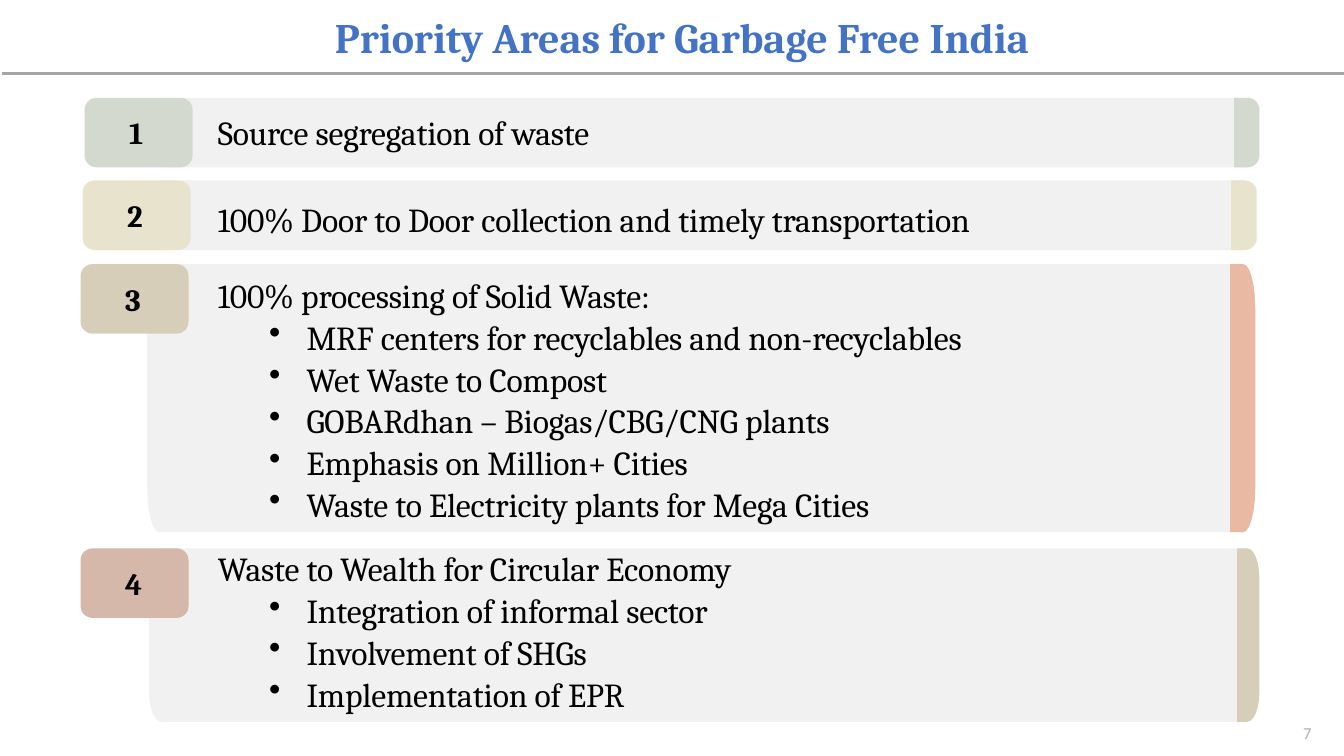
import dataclasses
import math

import pptx
import pptx.dml.color
import pptx.enum.shapes
import pptx.enum.text
import pptx.oxml
import pptx.oxml.ns
import pptx.util

Inches = pptx.util.Inches
Pt = pptx.util.Pt
Align = pptx.enum.text.PP_ALIGN
Anchor = pptx.enum.text.MSO_ANCHOR


@dataclasses.dataclass(frozen=True)
class Theme:
    heading_font: str = "Cambria"
    number_font: str = "Calibri"
    title: str = "4472C4"
    text: str = "000000"
    page: str = "B2B2B2"
    rule: str = "A5A5A5"
    panel: str = "F1F1F1"
    sage: str = "D3D9CF"
    cream: str = "E7E3CC"
    sand: str = "D7CEB9"
    coral: str = "EAB9A4"
    rose: str = "D6B8AB"
    title_size: float = 30
    body_size: float = 24
    badge_size: float = 22
    page_size: float = 12


@dataclasses.dataclass(frozen=True)
class Area:
    top: float
    height: float
    badge_left: float
    panel_left: float
    cap_left: float
    cap_width: float
    text_top: float
    badge_color: str
    cap_color: str
    heading: str
    points: tuple = ()


THEME = Theme()
PANEL_WIDTH = 10.99
BADGE_WIDTH = 1.07
BADGE_HEIGHT = 0.69
CORNER = 0.12
AREAS = [
    Area(0.97, 0.69, 0.84, 1.5, 12.24, 0.25, 1.1, THEME.sage, THEME.sage,
         "Source segregation of waste"),
    Area(1.79, 0.69, 0.82, 1.48, 12.21, 0.25, 1.96, THEME.cream, THEME.cream,
         "100% Door to Door collection and timely transportation"),
    Area(2.62, 2.66, 0.8, 1.46, 12.2, 0.25, 2.72, THEME.sand, THEME.coral,
         "100% processing of Solid Waste:",
         ("MRF centers for recyclables and non-recyclables",
          "Wet Waste to Compost",
          "GOBARdhan – Biogas/CBG/CNG plants",
          "Emphasis on Million+ Cities",
          "Waste to Electricity plants for Mega Cities")),
    Area(5.44, 1.72, 0.8, 1.48, 12.27, 0.22, 5.43, THEME.rose, THEME.sand,
         "Waste to Wealth for Circular Economy",
         ("Integration of informal sector",
          "Involvement of SHGs",
          "Implementation of EPR")),
]


def rgb(color):
    return pptx.dml.color.RGBColor.from_string(color)


class SlideBuilder:
    def __init__(self, slide, theme):
        self.slide = slide
        self.theme = theme

    def set_font(self, paragraph, size, color, bold=False, name=None):
        font = paragraph.font
        font.name = name or self.theme.heading_font
        font.size = Pt(size)
        font.bold = bold
        font.color.rgb = rgb(color)

    def prepare_frame(self, frame, anchor=Anchor.TOP):
        frame.word_wrap = True
        frame.vertical_anchor = anchor
        frame.margin_left = frame.margin_right = frame.margin_bottom = 0
        frame.margin_top = Inches(0.01)

    def add_title(self, wording, left, top, width, height):
        title = self.slide.shapes.title
        title.left, title.top = Inches(left), Inches(top)
        title.width, title.height = Inches(width), Inches(height)
        self.prepare_frame(title.text_frame, Anchor.MIDDLE)
        heading = title.text_frame.paragraphs[0]
        heading.text = wording
        heading.alignment = Align.CENTER
        heading.line_spacing = 0.9
        self.set_font(heading, self.theme.title_size, self.theme.title, bold=True)

    def add_rule(self, left, right, y):
        rule = self.slide.shapes.add_connector(
            pptx.enum.shapes.MSO_CONNECTOR.STRAIGHT,
            Inches(left), Inches(y), Inches(right), Inches(y))
        rule.line.color.rgb = rgb(self.theme.rule)
        rule.line.width = Pt(2.25)
        properties = rule._element.spPr
        properties.append(pptx.oxml.parse_xml(
            f'<a:effectLst {pptx.oxml.ns.nsdecls("a")}/>'))

    def add_block(self, left, top, width, height, color, square_left=False):
        """Draw a block whose corners stretch with its height."""
        rise = height / 6
        corners = [(left + width - CORNER, top + rise, -90),
                   (left + width - CORNER, top + height - rise, 0)]
        if not square_left:
            corners += [(left + CORNER, top + height - rise, 90),
                        (left + CORNER, top + rise, 180)]
        outline = [(x + CORNER * math.cos(math.radians(start + turn)),
                    y + rise * math.sin(math.radians(start + turn)))
                   for x, y, start in corners for turn in range(0, 91, 15)]
        if square_left:
            outline += [(left, top + height), (left, top)]
        points = [(Inches(x), Inches(y)) for x, y in outline]
        builder = self.slide.shapes.build_freeform(*points[0])
        builder.add_line_segments(points[1:], close=True)
        block = builder.convert_to_shape()
        block.shadow.inherit = False
        block.fill.solid()
        block.fill.fore_color.rgb = rgb(color)
        block.line.fill.background()

    def add_text_frame(self, left, top, width, height, anchor=Anchor.TOP):
        frame = self.slide.shapes.add_textbox(
            Inches(left), Inches(top), Inches(width), Inches(height)).text_frame
        self.prepare_frame(frame, anchor)
        return frame

    def write_line(self, paragraph, wording, size, bold=False, bullet=False):
        run = paragraph.add_run()
        run.text = wording
        run._r.get_or_add_rPr().set("spc", "-10")
        paragraph.space_before = Pt(1)
        properties = paragraph._p.get_or_add_pPr()
        properties.set("marL", str(Inches(0.89 if bullet else 0.01)))
        properties.set("indent", str(Inches(-0.37 if bullet else 0)))
        if bullet:
            paragraph.level = 1
            namespace = pptx.oxml.ns.nsdecls("a")
            properties.append(pptx.oxml.parse_xml(
                f'<a:buClr {namespace}><a:srgbClr val="{self.theme.text}"/></a:buClr>'))
            properties.append(pptx.oxml.parse_xml(f'<a:buChar {namespace} char="•"/>'))
        self.set_font(paragraph, size, self.theme.text, bold)

    def add_area(self, number, area):
        theme = self.theme
        self.add_block(area.panel_left, area.top, PANEL_WIDTH, area.height, theme.panel)
        self.add_block(area.badge_left, area.top, BADGE_WIDTH, BADGE_HEIGHT,
                       area.badge_color)
        self.add_block(area.cap_left, area.top, area.cap_width, area.height,
                       area.cap_color, square_left=True)
        badge = self.add_text_frame(area.badge_left + 0.43, area.top + 0.15, 0.21, 0.38)
        self.write_line(badge.paragraphs[0], str(number), theme.badge_size, bold=True)
        body = self.add_text_frame(2.15, area.text_top, 8.12,
                                   0.41 * (1 + len(area.points)))
        self.write_line(body.paragraphs[0], area.heading, theme.body_size)
        for point in area.points:
            self.write_line(body.add_paragraph(), point, theme.body_size, bullet=True)

    def add_page_number(self, number):
        frame = self.add_text_frame(9.94, 7.13, 3.07, 0.27, Anchor.MIDDLE)
        page = frame.paragraphs[0]
        page.text = str(number)
        page.alignment = Align.RIGHT
        self.set_font(page, self.theme.page_size, self.theme.page,
                      name=self.theme.number_font)


def main():
    deck = pptx.Presentation()
    deck.slide_width, deck.slide_height = Inches(13.33), Inches(7.5)
    builder = SlideBuilder(deck.slides.add_slide(deck.slide_layouts[5]), THEME)
    builder.add_title("Priority Areas for Garbage Free India", 2.87, 0.05, 7.79, 0.69)
    builder.add_rule(0.02, 13.33, 0.73)
    for number, area in enumerate(AREAS, start=1):
        builder.add_area(number, area)
    builder.add_page_number(7)
    deck.save("out.pptx")


if __name__ == "__main__":
    main()
